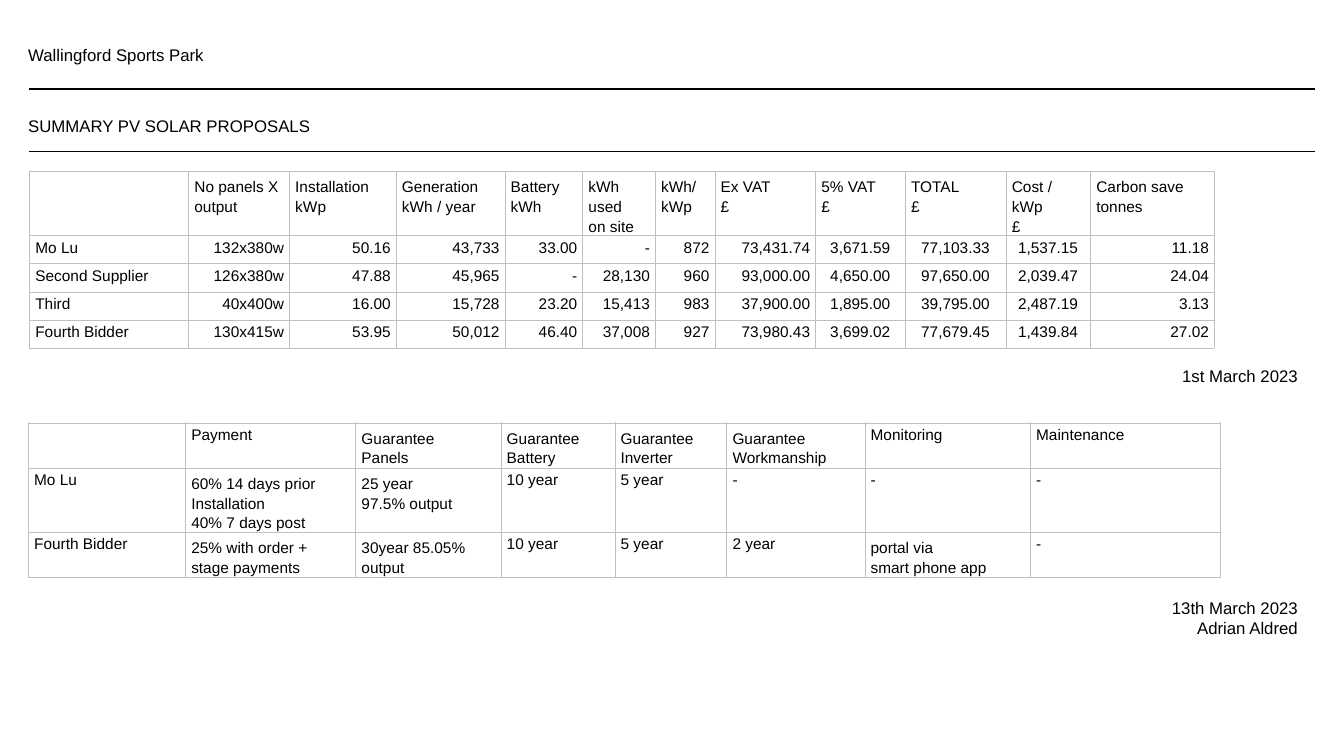
from dataclasses import dataclass

from lxml import etree
from pptx import Presentation
from pptx.dml.color import RGBColor
from pptx.enum.shapes import MSO_CONNECTOR
from pptx.enum.text import PP_ALIGN
from pptx.oxml.ns import qn
from pptx.util import Cm, Pt

LEFT, CENTER, RIGHT = PP_ALIGN.LEFT, PP_ALIGN.CENTER, PP_ALIGN.RIGHT
STRAIGHT = MSO_CONNECTOR.STRAIGHT

# Content: each tuple inside a cell holds the lines of that cell
COSTS = [
    ["", ("No panels X", "output"), ("Installation", "kWp"),
     ("Generation", "kWh / year"), ("Battery", "kWh"),
     ("kWh", "used", "on site"), ("kWh/", "kWp"), ("Ex VAT", "£"),
     ("5% VAT", "£"), ("TOTAL", "£"), ("Cost /", "kWp", "£"),
     ("Carbon save", "tonnes")],
    ["Mo Lu", "132x380w", "50.16", "43,733", "33.00", "-", "872",
     "73,431.74", "3,671.59", "77,103.33", "1,537.15", "11.18"],
    ["Second Supplier", "126x380w", "47.88", "45,965", "-", "28,130", "960",
     "93,000.00", "4,650.00", "97,650.00", "2,039.47", "24.04"],
    ["Third", "40x400w", "16.00", "15,728", "23.20", "15,413", "983",
     "37,900.00", "1,895.00", "39,795.00", "2,487.19", "3.13"],
    ["Fourth Bidder", "130x415w", "53.95", "50,012", "46.40", "37,008", "927",
     "73,980.43", "3,699.02", "77,679.45", "1,439.84", "27.02"],
]
COST_WIDTHS = [4.01, 2.54, 2.69, 2.74, 1.96, 1.83, 1.5, 2.54, 2.26, 2.54, 2.13, 3.12]
COST_HEIGHTS = [1.6, 0.71, 0.71, 0.71, 0.71]
COST_ALIGNS = [LEFT] + [RIGHT] * 7 + [CENTER] * 3 + [RIGHT]

TERMS = [
    ["", "Payment", ("Guarantee", "Panels"), ("Guarantee", "Battery"),
     ("Guarantee", "Inverter"), ("Guarantee", "Workmanship"),
     "Monitoring", "Maintenance"],
    ["Mo Lu", ("60% 14 days prior", "Installation", "40% 7 days post"),
     ("25 year", "97.5% output"), "10 year", "5 year", "-", "-", "-"],
    ["Fourth Bidder", ("25% with order +", "stage payments"),
     ("30year 85.05%", "output"), "10 year", "5 year", "2 year",
     ("portal via", "smart phone app"), "-"],
]
TERM_WIDTHS = [3.96, 4.29, 3.66, 2.87, 2.82, 3.48, 4.17, 4.8]
TERM_HEIGHTS = [1.14, 1.6, 1.14]
TERM_ALIGNS = [LEFT] * len(TERM_WIDTHS)

# Lines, left, top, width (cm), alignment
TEXTS = [
    (["Wallingford Sports Park"], 0.71, 1.09, 8.2, LEFT),
    (["SUMMARY PV SOLAR PROPOSALS"], 0.71, 2.89, 8.2, LEFT),
    (["1st March 2023"], 27.71, 9.19, 5, RIGHT),
    (["13th March 2023", "Adrian Aldred"], 27.71, 15.0, 5, RIGHT),
]
RULES = [2.24, 3.81]
RULE_LEFT, RULE_RIGHT = 0.74, 33.15


@dataclass
class Theme:
    font: str = "Arial"
    ink: RGBColor = RGBColor(0, 0, 0)
    grid: str = "BFBFBF"
    grid_width: int = Pt(0.25)
    heading: int = Pt(12)
    body: int = Pt(11)
    leading: int = Pt(14)


THEME = Theme()


def write_lines(para, lines, size, align):
    para.alignment = align
    if len(lines) > 1:
        para.line_spacing = THEME.leading
    for index, line in enumerate(lines):
        if index:
            para.add_line_break()
        span = para.add_run()
        span.text = line
        span.font.name = THEME.font
        span.font.size = size
        span.font.color.rgb = THEME.ink


def add_text(page, lines, left, top, width, align):
    box = page.shapes.add_textbox(Cm(left), Cm(top), Cm(width), Cm(0.55 * len(lines)))
    frame = box.text_frame
    frame.word_wrap = True
    frame.margin_left = frame.margin_right = frame.margin_bottom = 0
    several = len(lines) > 1
    frame.margin_top = Cm(0.08 if several else 0.03)
    para = frame.paragraphs[0]
    para.space_before = Pt(1.8 if several else 1)
    write_lines(para, lines, THEME.heading, align)


def add_rule(page, top):
    rule = page.shapes.add_connector(STRAIGHT, Cm(RULE_LEFT), Cm(top), Cm(RULE_RIGHT), Cm(top))
    rule.line.color.rgb = THEME.ink
    rule.line.width = Pt(1)
    etree.SubElement(rule._element.spPr, qn("a:effectLst"))


def draw_borders(cell):
    properties = cell._tc.get_or_add_tcPr()
    for index, side in enumerate(("a:lnL", "a:lnR", "a:lnT", "a:lnB")):
        border = etree.Element(qn(side), w=str(int(THEME.grid_width)))
        fill = etree.SubElement(border, qn("a:solidFill"))
        etree.SubElement(fill, qn("a:srgbClr"), val=THEME.grid)
        properties.insert(index, border)


def fill_cell(cell, content, align):
    cell.fill.background()
    draw_borders(cell)
    lines = (content,) if isinstance(content, str) else content
    several = len(lines) > 1
    cell.margin_left = Cm(0.15 if align == LEFT else 0)
    cell.margin_right = Cm(0.13 if align == RIGHT else 0)
    cell.margin_top = Cm(0.13 if several else 0.1)
    cell.margin_bottom = 0
    para = cell.text_frame.paragraphs[0]
    para.space_before = Pt(4 if several else 3.1)
    if content:
        write_lines(para, lines, THEME.body, align)
    else:
        para.font.size = THEME.body


def add_grid(page, rows, left, top, widths, heights, aligns):
    table = page.shapes.add_table(len(rows), len(widths), Cm(left), Cm(top),
                                  Cm(sum(widths)), Cm(sum(heights))).table
    table.first_row = table.horz_banding = False
    for column, width in zip(table.columns, widths):
        column.width = Cm(width)
    for row, height in zip(table.rows, heights):
        row.height = Cm(height)
    for r, row in enumerate(rows):
        for c, content in enumerate(row):
            fill_cell(table.cell(r, c), content, aligns[c] if r else LEFT)


def main():
    deck = Presentation()
    deck.slide_width, deck.slide_height = Cm(33.87), Cm(19.05)
    page = deck.slides.add_slide(deck.slide_layouts[6])

    # Headings, dates and rules
    for text in TEXTS:
        add_text(page, *text)
    for top in RULES:
        add_rule(page, top)

    # Tables
    add_grid(page, COSTS, 0.74, 4.32, COST_WIDTHS, COST_HEIGHTS, COST_ALIGNS)
    add_grid(page, TERMS, 0.71, 10.65, TERM_WIDTHS, TERM_HEIGHTS, TERM_ALIGNS)
    deck.save("out.pptx")


if __name__ == "__main__":
    main()
